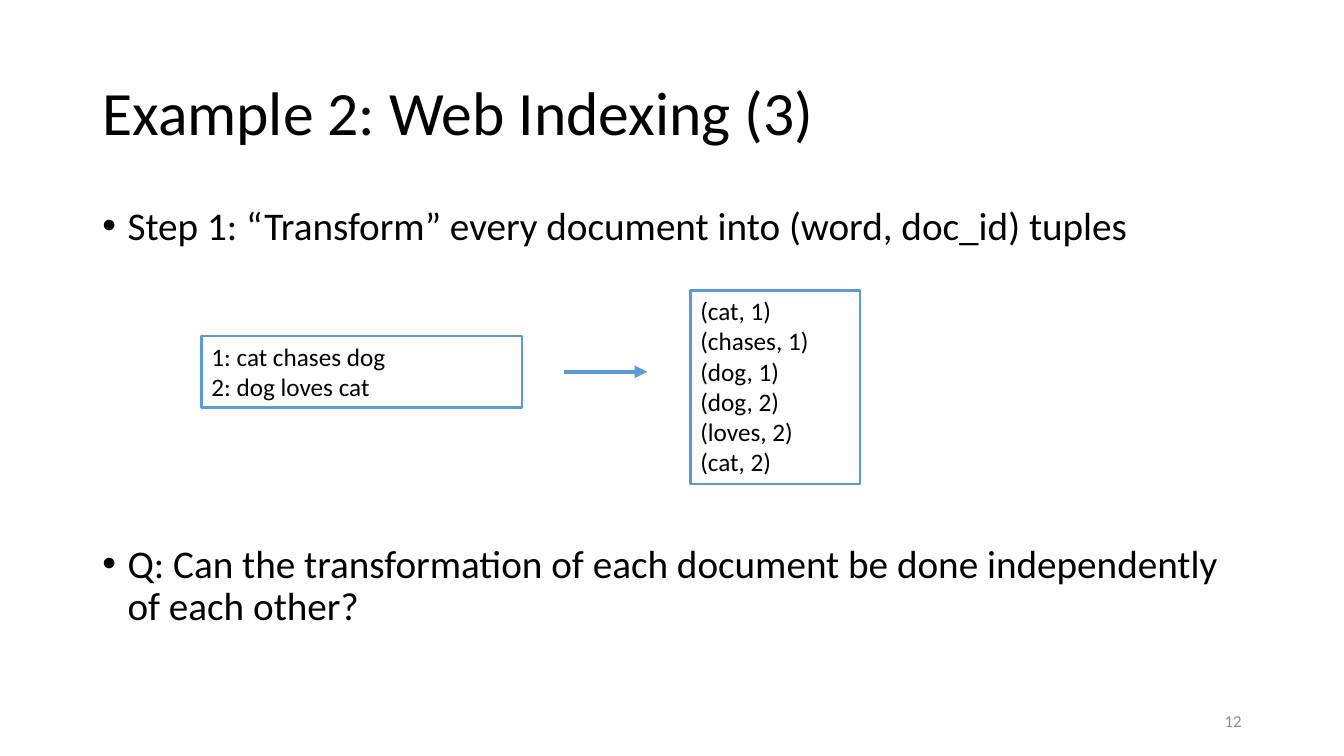
from dataclasses import dataclass

from lxml import etree
from pptx import Presentation
from pptx import util as u
from pptx.dml.color import RGBColor
from pptx.enum import shapes, text
from pptx.oxml import ns


@dataclass(frozen=True)
class Theme:
    font: str = "Calibri"
    ink: RGBColor = RGBColor(0, 0, 0)
    muted: RGBColor = RGBColor(0x8C, 0x8C, 0x8C)
    accent: RGBColor = RGBColor(0x5B, 0x9B, 0xD5)
    title: int = 44
    body: int = 28
    sample: int = 18
    footer: int = 12
    border: float = 1.75
    arrow: float = 3


class SlideBuilder:
    def __init__(self, slide, theme):
        self.slide = slide
        self.theme = theme

    def set_lines(self, shape, lines, size, color=None, anchor=text.MSO_ANCHOR.TOP,
                  align=text.PP_ALIGN.LEFT):
        """Fill a shape with one paragraph per line."""
        frame = shape.text_frame
        frame.word_wrap = True
        frame.vertical_anchor = anchor
        frame.text = "\n".join(lines)
        for paragraph in frame.paragraphs:
            paragraph.alignment = align
            paragraph.font.name = self.theme.font
            paragraph.font.size = u.Pt(size)
            paragraph.font.color.rgb = color or self.theme.ink
        return frame.paragraphs

    def label(self, lines, box, size, **style):
        area = self.slide.shapes.add_textbox(*map(u.Cm, box))
        return self.set_lines(area, lines, size, **style)

    def title(self, wording, box):
        heading, = self.label([wording], box, self.theme.title,
                              anchor=text.MSO_ANCHOR.MIDDLE)
        heading.line_spacing = 0.9

    def bullets(self, points, box, gaps):
        """Bulleted points, each with its own space before."""
        indent = u.Cm(0.635)
        for point, gap in zip(self.label(points, box, self.theme.body), gaps):
            point.line_spacing = 0.9
            point.space_before = u.Pt(gap)
            properties = point._p.get_or_add_pPr()
            properties.set("marL", str(indent))
            properties.set("indent", str(-indent))
            bullet_font = etree.Element(ns.qn("a:buFont"), typeface="Arial")
            bullet = etree.Element(ns.qn("a:buChar"), char="•")
            # Bullet marks belong before the default run properties
            for mark in (bullet_font, bullet):
                properties.find(ns.qn("a:defRPr")).addprevious(mark)

    def data_box(self, lines, box):
        frame = self.slide.shapes.add_shape(shapes.MSO_SHAPE.RECTANGLE, *map(u.Cm, box))
        frame.shadow.inherit = False
        frame.fill.background()
        frame.line.color.rgb = self.theme.accent
        frame.line.width = u.Pt(self.theme.border)
        self.set_lines(frame, lines, self.theme.sample)

    def arrow(self, start, end, y):
        arrow = self.slide.shapes.add_connector(
            shapes.MSO_CONNECTOR.STRAIGHT, u.Cm(start), u.Cm(y), u.Cm(end), u.Cm(y))
        arrow.line.color.rgb = self.theme.accent
        arrow.line.width = u.Pt(self.theme.arrow)
        etree.SubElement(arrow.line._get_or_add_ln(), ns.qn("a:tailEnd"), type="triangle")
        etree.SubElement(arrow._element.spPr, ns.qn("a:effectLst"))


def main():
    deck = Presentation()
    deck.slide_width, deck.slide_height = u.Cm(33.87), u.Cm(19.05)
    theme = Theme()
    page = SlideBuilder(deck.slides.add_slide(deck.slide_layouts[6]), theme)

    # Title and the two points, with room between them for the diagram
    margin, content_width = 2.33, 29.21
    page.title("Example 2: Web Indexing (3)", (margin, 1.07, content_width, 3.68))
    page.bullets(
        ["Step 1: “Transform” every document into (word, doc_id) tuples",
         "Q: Can the transformation of each document be done independently of each other?"],
        (margin, 5.08, content_width, 12.09), gaps=(10, 211))

    # Documents and the tuples made from them
    documents = ["cat chases dog", "dog loves cat"]
    numbered = [f"{number}: {words}" for number, words in enumerate(documents, 1)]
    tuples = [f"({word}, {number})" for number, words in enumerate(documents, 1)
              for word in words.split()]
    page.data_box(numbered, (5.08, 8.47, 8.08, 1.8))
    page.data_box(tuples, (17.4, 7.32, 4.27, 4.88))
    page.arrow(14.22, 16.31, 9.37)

    # Slide number
    page.label(["12"], (23.92, 17.66, 7.62, 1.01), theme.footer, color=theme.muted,
               anchor=text.MSO_ANCHOR.MIDDLE, align=text.PP_ALIGN.RIGHT)

    deck.save("out.pptx")


if __name__ == "__main__":
    main()
